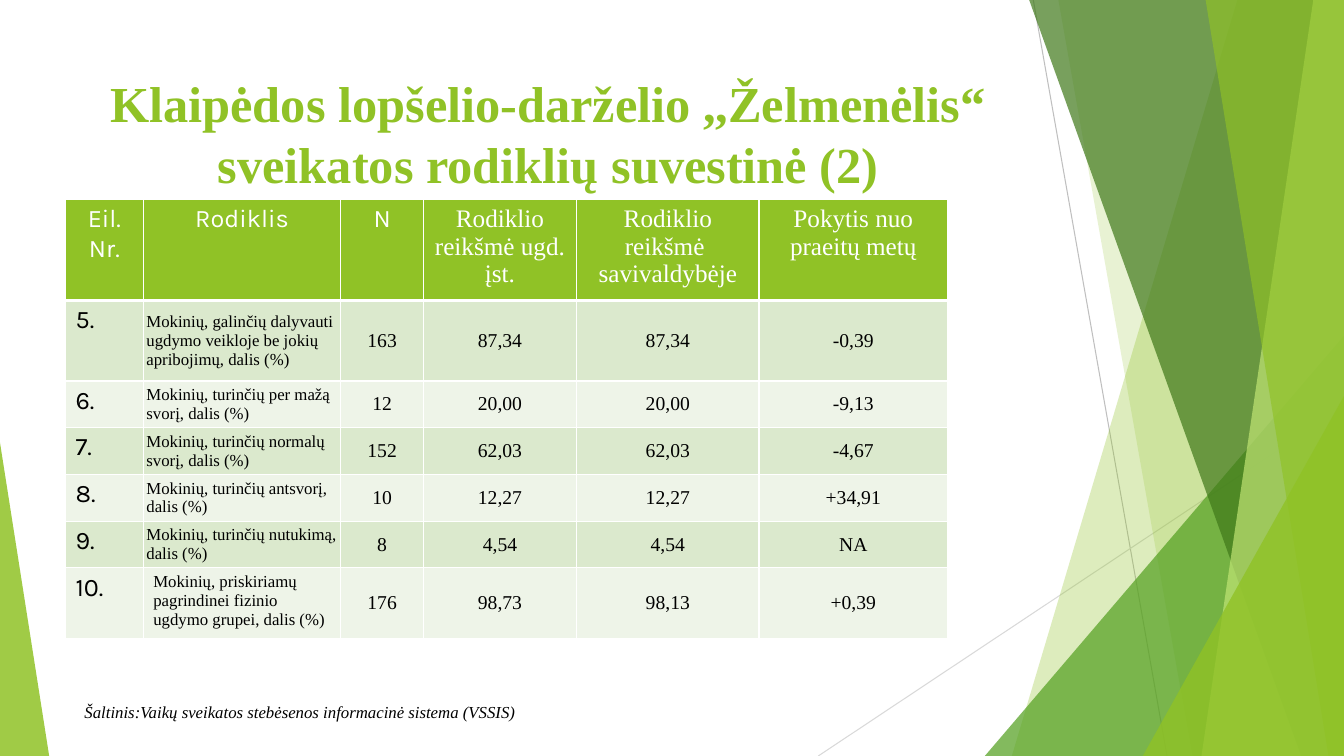
import pptx
import pptx.dml.color
import pptx.enum.shapes
import pptx.enum.text
import pptx.oxml
import pptx.oxml.ns
import pptx.util

Cm = pptx.util.Cm
Pt = pptx.util.Pt
RGBColor = pptx.dml.color.RGBColor
Align = pptx.enum.text.PP_ALIGN
Anchor = pptx.enum.text.MSO_ANCHOR
qn = pptx.oxml.ns.qn
NAMESPACE = pptx.oxml.ns.nsdecls("a")

WIDTH, HEIGHT = 33.87, 19.05
LIME = RGBColor(0x90, 0xC2, 0x26)
PALE_LIME = RGBColor(0xC0, 0xE4, 0x74)
GREEN = RGBColor(0x54, 0xA0, 0x21)
DARK_GREEN = RGBColor(0x3F, 0x78, 0x19)
ROW_DARK = RGBColor(0xDB, 0xE9, 0xCD)
ROW_LIGHT = RGBColor(0xEE, 0xF4, 0xE8)
GREY = RGBColor(0xBF, 0xBF, 0xBF)
LIGHT_GREY = RGBColor(0xD9, 0xD9, 0xD9)
WHITE = RGBColor(0xFF, 0xFF, 0xFF)
BLACK = RGBColor(0, 0, 0)

SERIF, SANS = "Times New Roman", "Karla"

COLUMN_WIDTHS = [1.96, 4.98, 2.08, 3.86, 4.60, 4.75]
ROW_HEIGHTS = [2.34, 2.03, 1.07, 1.07, 1.07, 1.07, 1.65]
HEADERS = ["Eil. Nr.", "Rodiklis", "N", "Rodiklio reikšmė ugd. įst.",
           "Rodiklio reikšmė  savivaldybėje", "Pokytis nuo praeitų metų"]
INDICATORS = [
    ["5.", "Mokinių, galinčių dalyvauti ugdymo veikloje be jokių apribojimų, dalis (%)",
     "163", "87,34", "87,34", "-0,39"],
    ["6.", "Mokinių, turinčių per mažą svorį, dalis (%)", "12", "20,00", "20,00", "-9,13"],
    ["7.", "Mokinių, turinčių normalų svorį, dalis (%)", "152", "62,03", "62,03", "-4,67"],
    ["8.", "Mokinių, turinčių antsvorį, dalis (%)", "10", "12,27", "12,27", "+34,91"],
    ["9.", "Mokinių, turinčių nutukimą, dalis (%)", "8", "4,54", "4,54", "NA"],
    ["10.", "Mokinių, priskiriamų pagrindinei fizinio ugdymo grupei, dalis (%)",
     "176", "98,73", "98,13", "+0,39"],
]


class SlideBuilder:
    def __init__(self, presentation):
        self.slide = presentation.slides.add_slide(presentation.slide_layouts[6])
        self.shapes = self.slide.shapes

    def line(self, start, end, color):
        connector = self.shapes.add_connector(
            pptx.enum.shapes.MSO_CONNECTOR.STRAIGHT, *map(Cm, start + end))
        connector.line.color.rgb = color
        connector.line.width = Pt(0.75)
        connector._element.spPr.append(pptx.oxml.parse_xml(f"<a:effectLst {NAMESPACE}/>"))

    def paint(self, shape, color, opacity):
        shape.shadow.inherit = False
        shape.fill.solid()
        shape.fill.fore_color.rgb = color
        shape.line.fill.background()
        fill_color = shape._element.spPr.find(qn("a:solidFill")).find(qn("a:srgbClr"))
        fill_color.append(pptx.oxml.parse_xml(
            f'<a:alpha {NAMESPACE} val="{opacity * 1000}"/>'))

    def band(self, top_x, bottom_x, color, opacity):
        """Fill from a slanted left edge to the right side of the slide."""
        top = Cm(-0.02)
        builder = self.shapes.build_freeform(Cm(top_x), top)
        builder.add_line_segments([(Cm(WIDTH), top), (Cm(WIDTH), Cm(HEIGHT)),
                                   (Cm(bottom_x), Cm(HEIGHT))])
        self.paint(builder.convert_to_shape(), color, opacity)

    def triangle(self, left, top, width, apex, color, opacity):
        shape = self.shapes.add_shape(
            pptx.enum.shapes.MSO_SHAPE.ISOSCELES_TRIANGLE,
            Cm(left), Cm(top), Cm(width), Cm(HEIGHT - top))
        shape.adjustments[0] = apex
        self.paint(shape, color, opacity)

    def fill_text(self, frame, text, size, font, color, align=Align.LEFT,
                  bold=False, italic=False):
        paragraph = frame.paragraphs[0]
        paragraph.alignment = align
        run = paragraph.add_run()
        run.text = text
        run.font.size = Pt(size)
        run.font.name = font
        run.font.color.rgb = color
        run.font.bold = bold
        run.font.italic = italic

    def text(self, left, top, width, height, text, size, color, **style):
        frame = self.shapes.add_textbox(Cm(left), Cm(top), Cm(width), Cm(height)).text_frame
        frame.word_wrap = True
        self.fill_text(frame, text, size, SERIF, color, **style)

    def borders(self, cell, top, bottom):
        properties = cell._tc.get_or_add_tcPr()
        for side, width in (("L", 1), ("R", 1), ("T", top), ("B", bottom)):
            properties.append(pptx.oxml.parse_xml(
                f'<a:ln{side} {NAMESPACE} w="{Pt(width)}">'
                f'<a:solidFill><a:srgbClr val="{WHITE}"/></a:solidFill></a:ln{side}>'))

    def cell(self, cell, text, row, column):
        header = row == 0
        self.borders(cell, top=3 if row == 1 else 1, bottom=3 if header else 1)
        cell.fill.solid()
        cell.fill.fore_color.rgb = LIME if header else ROW_DARK if row % 2 else ROW_LIGHT
        if header:
            font = SANS if column < 3 else SERIF
            self.fill_text(cell.text_frame, text, 18, font, WHITE, Align.CENTER)
            return
        last_description = column == 1 and row == len(INDICATORS)
        if column > 0 and not last_description:
            cell.vertical_anchor = Anchor.MIDDLE
            cell.margin_left = cell.margin_right = Cm(0.08)
            cell.margin_top = cell.margin_bottom = Cm(0.08)
        size = {0: 18, 1: 12}.get(column, 14)
        self.fill_text(cell.text_frame, text, size, SANS if column == 0 else SERIF, BLACK,
                       Align.CENTER if column > 1 else Align.LEFT)

    def table(self, left, top, rows):
        table = self.shapes.add_table(
            len(rows), len(COLUMN_WIDTHS), Cm(left), Cm(top),
            Cm(sum(COLUMN_WIDTHS)), Cm(sum(ROW_HEIGHTS))).table
        for column, width in zip(table.columns, COLUMN_WIDTHS):
            column.width = Cm(width)
        for row, height in zip(table.rows, ROW_HEIGHTS):
            row.height = Cm(height)
        for row, values in enumerate(rows):
            for column, value in enumerate(values):
                self.cell(table.cell(row, column), value, row, column)


def main():
    presentation = pptx.Presentation()
    presentation.slide_width = Cm(WIDTH)
    presentation.slide_height = Cm(HEIGHT)
    builder = SlideBuilder(presentation)

    # Background facets
    builder.line((26.04, 0), (29.41, HEIGHT), GREY)
    builder.line((WIDTH, 10.24), (20.62, HEIGHT), LIGHT_GREY)
    builder.band(31.19, 25.50, LIME, 30)
    builder.band(26.67, 30.05, LIME, 20)
    builder.triangle(24.82, 8.46, 9.05, 1, GREEN, 72)
    builder.band(25.93, 32.79, DARK_GREEN, 70)
    builder.band(33.10, 30.28, PALE_LIME, 70)
    builder.band(30.38, 33.48, LIME, 65)
    builder.triangle(28.80, 9.98, 5.07, 1, LIME, 80)
    builder.triangle(0, 11.15, 1.24, 0, LIME, 85)

    # Title
    builder.text(1.88, 1.70, 23.88, 3.66,
                 "Klaipėdos lopšelio-darželio ,,Želmenėlis“ sveikatos rodiklių suvestinė (2)",
                 36, LIME, align=Align.CENTER, bold=True)

    # Indicator table
    builder.table(1.65, 5.03, [HEADERS] + INDICATORS)

    # Source note
    builder.text(1.88, 17.55, 16.94, 0.76,
                 "Šaltinis:Vaikų sveikatos stebėsenos informacinė sistema (VSSIS)",
                 12, BLACK, italic=True)

    presentation.save("out.pptx")


if __name__ == "__main__":
    main()
